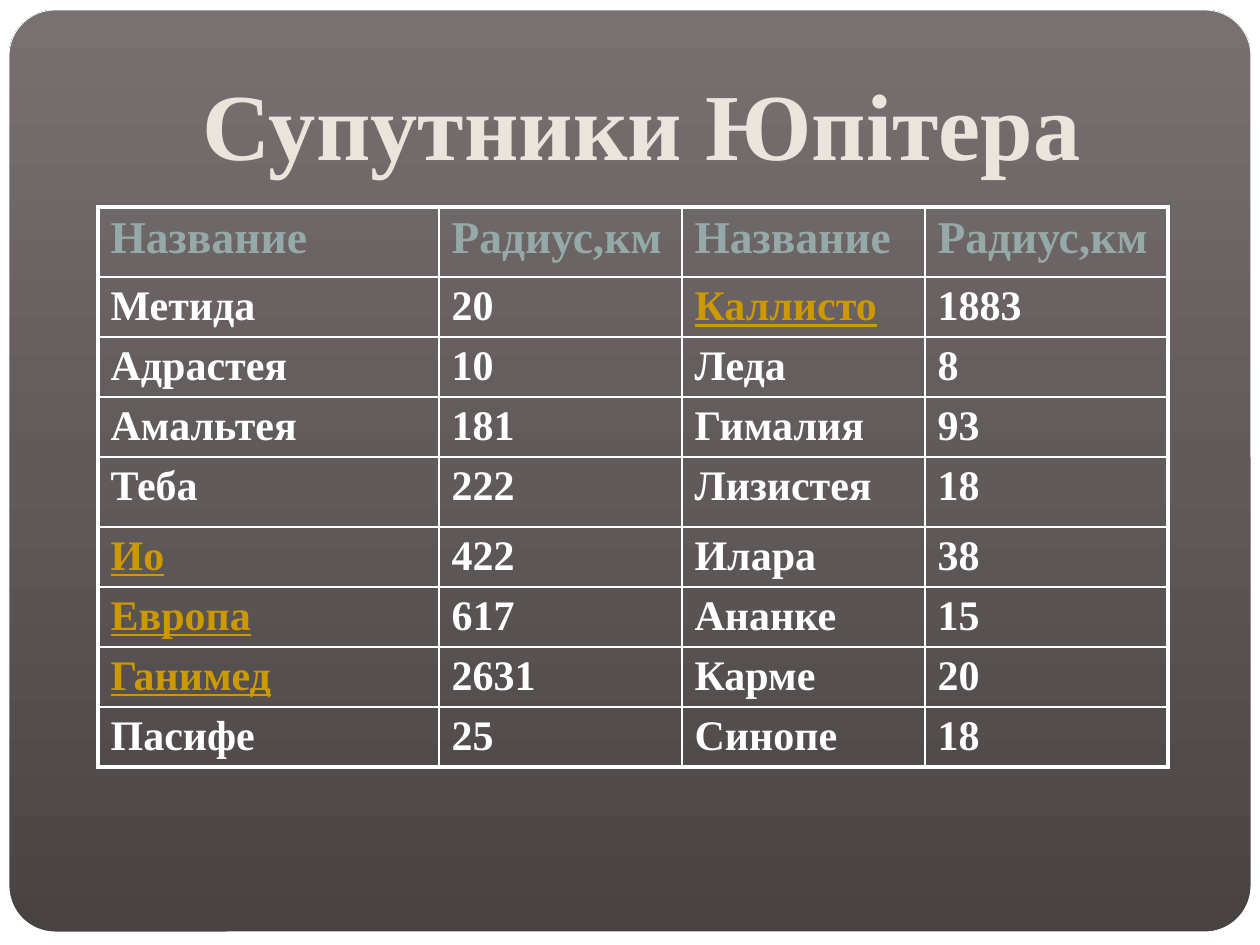
import copy

import pptx
import pptx.dml.color
import pptx.enum.shapes
import pptx.enum.text
import pptx.oxml
import pptx.oxml.ns
import pptx.util

RGB = pptx.dml.color.RGBColor
WHITE = RGB(0xFF, 0xFF, 0xFF)
CREAM = RGB(0xE9, 0xE5, 0xDC)
SAGE = RGB(0x96, 0xA9, 0xA9)
GOLD = RGB(0xCC, 0x99, 0x00)
GRADIENT = [
    (0, RGB(0x48, 0x42, 0x42)),
    (0.5, RGB(0x61, 0x5A, 0x5A)),
    (1, RGB(0x79, 0x71, 0x71)),
]

TITLE = "Супутники Юпітера"
MOONS = [
    ("Название", "Радиус,км", "Название", "Радиус,км"),
    ("Метида", "20", "Каллисто", "1883"),
    ("Адрастея", "10", "Леда", "8"),
    ("Амальтея", "181", "Гималия", "93"),
    ("Теба", "222", "Лизистея", "18"),
    ("Ио", "422", "Илара", "38"),
    ("Европа", "617", "Ананке", "15"),
    ("Ганимед", "2631", "Карме", "20"),
    ("Пасифе", "25", "Синопе", "18"),
]
GALILEAN = {"Ио", "Европа", "Ганимед", "Каллисто"}
COLUMN_WIDTHS = [341, 243, 243, 243]
ROW_HEIGHTS = [70, 60, 60, 60, 70, 60, 60, 60, 60]

TITLE_FORMAT = {"size": 54, "color": CREAM}
HEADER_FORMAT = {"size": 26, "color": SAGE}
BODY_FORMAT = {"size": 24, "color": WHITE}
GALILEAN_FORMAT = {"size": 24, "color": GOLD, "underline": True}


def px(length):
    return pptx.util.Emu(length * 914400 // 126)


def write(frame, text, look):
    para = frame.paragraphs[0]
    span = para.add_run()
    span.text = text
    values = {"name": "Times New Roman", "bold": True, **look}
    span.font.color.rgb = values.pop("color")
    values["size"] = pptx.util.Pt(values["size"])
    for name, value in values.items():
        setattr(span.font, name, value)
    return para


def add_panel(page, kind, left, top, width, height):
    panel = page.shapes.add_shape(kind, px(left), px(top), px(width), px(height))
    panel.shadow.inherit = False
    panel.fill.solid()
    panel.fill.fore_color.rgb = WHITE
    panel.line.fill.background()
    return panel


def fill_gradient(panel):
    panel.fill.gradient()
    panel.fill.gradient_angle = 90
    stops = panel.element.spPr.find(".//" + pptx.oxml.ns.qn("a:gsLst"))
    stops.append(copy.deepcopy(stops[0]))
    for stop, (position, color) in zip(panel.fill.gradient_stops, GRADIENT):
        stop.position = position
        stop.color.rgb = color


def add_border(cell, side, width):
    border = pptx.oxml.parse_xml(
        f'<a:ln{side} {pptx.oxml.ns.nsdecls("a")} w="{int(pptx.util.Pt(width))}">'
        f'<a:solidFill><a:srgbClr val="{WHITE}"/></a:solidFill></a:ln{side}>'
    )
    cell._tc.get_or_add_tcPr().append(border)


def add_moons(page):
    frame = page.shapes.add_table(
        len(MOONS), len(COLUMN_WIDTHS), px(98), px(207),
        px(sum(COLUMN_WIDTHS)), px(sum(ROW_HEIGHTS)),
    )
    table = frame.table
    table.first_row = table.horz_banding = False
    for column, width in zip(table.columns, COLUMN_WIDTHS):
        column.width = px(width)
    for row, height in zip(table.rows, ROW_HEIGHTS):
        row.height = px(height)
    last_row, last_column = len(MOONS) - 1, len(COLUMN_WIDTHS) - 1
    for r, names in enumerate(MOONS):
        for c, text in enumerate(names):
            cell = table.cell(r, c)
            outer = {"L": c == 0, "R": c == last_column, "T": r == 0, "B": r == last_row}
            for side, is_outer in outer.items():
                add_border(cell, side, 2.25 if is_outer else 1)
            cell.fill.background()
            look = GALILEAN_FORMAT if text in GALILEAN else BODY_FORMAT
            write(cell.text_frame, text, HEADER_FORMAT if r == 0 else look)


def main():
    deck = pptx.Presentation()
    deck.slide_width, deck.slide_height = px(1260), px(945)
    page = deck.slides.add_slide(deck.slide_layouts[6])
    shapes = pptx.enum.shapes.MSO_SHAPE

    add_panel(page, shapes.RECTANGLE, 0, 0, 1260, 945)
    panel = add_panel(page, shapes.ROUNDED_RECTANGLE, 9, 10, 1242, 922)
    panel.adjustments[0] = 0.05
    fill_gradient(panel)
    panel.line.color.rgb = WHITE
    panel.line.width = pptx.util.Pt(0.5)

    add_moons(page)

    box = page.shapes.add_textbox(px(177), px(60), px(930), px(122))
    box.text_frame.word_wrap = False
    para = write(box.text_frame, TITLE, TITLE_FORMAT)
    para.alignment = pptx.enum.text.PP_ALIGN.CENTER

    deck.save("out.pptx")


if __name__ == "__main__":
    main()
